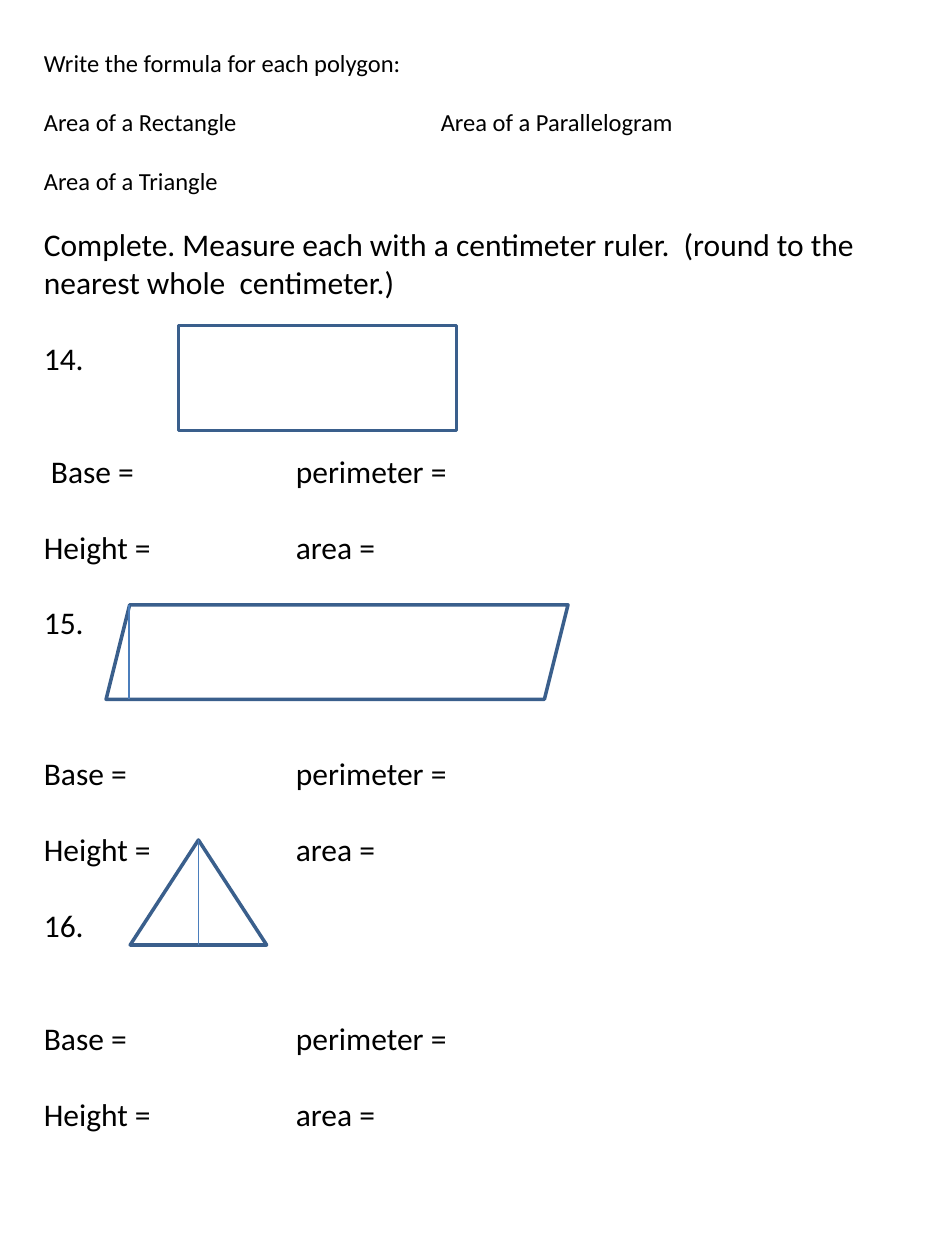
from lxml.etree import SubElement
from pptx import Presentation
from pptx.dml.color import RGBColor
from pptx.enum.shapes import MSO_CONNECTOR, MSO_SHAPE
from pptx.enum.text import MSO_AUTO_SIZE
from pptx.oxml.ns import qn
from pptx.util import Inches, Pt

HUES = {"ink": "000000", "paper": "FFFFFF", "edge": "3A5F8C", "height": "4B7EBC"}
COLS, ROWS = 90, 120
FONT = "Calibri"
SMALL, LARGE = 14, 18
LINE = {SMALL: 16.9, LARGE: 21.6}
TASKS = [("14.", " Base =", 2), ("15.", "Base =", 3), ("16.", "Base =", 2)]


def hue(name):
    """Return a named colour."""
    return RGBColor.from_string(HUES[name])


def grid(deck, *cells):
    """Turn alternating column and row counts into slide lengths."""
    units = (deck.slide_width / COLS, deck.slide_height / ROWS)
    return [round(cell * units[i % 2]) for i, cell in enumerate(cells)]


def add_line(frame, text, size, gap=0, stop=None):
    """Add a paragraph with a gap above and an optional tab stop in inches."""
    fresh = not frame.paragraphs[0].runs
    para = frame.paragraphs[0] if fresh else frame.add_paragraph()
    para.space_before = Pt(gap)
    if stop:
        tabs = SubElement(para._p.get_or_add_pPr(), qn("a:tabLst"))
        SubElement(tabs, qn("a:tab"), pos=str(Inches(stop)), algn="l")
    run = para.add_run()
    run.text = text
    run.font.name = FONT
    run.font.size = Pt(size)
    run.font.color.rgb = hue("ink")


def add_head(frame):
    """Write the formula prompts and the measuring instruction."""
    gap = LINE[SMALL]
    add_line(frame, "Write the formula for each polygon:", SMALL)
    add_line(frame, "Area of a Rectangle\tArea of a Parallelogram", SMALL, gap, 3.15)
    add_line(frame, "Area of a Triangle", SMALL, gap)
    add_line(frame, "Complete. Measure each with a centimeter ruler.  "
             "(round to the nearest whole  centimeter.)", LARGE, gap)


def add_task(frame, label, base, blank):
    """Write one numbered task with its answer prompts."""
    gap = LINE[LARGE]
    add_line(frame, label, LARGE, gap)
    add_line(frame, base + "\tperimeter =", LARGE, blank * gap, 2)
    add_line(frame, "Height =\tarea =", LARGE, gap, 2)


def add_text(slide, box):
    """Write the whole worksheet text in the given box."""
    frame = slide.shapes.add_textbox(*box).text_frame
    frame.word_wrap = True
    frame.auto_size = MSO_AUTO_SIZE.SHAPE_TO_FIT_TEXT
    add_head(frame)
    for task in TASKS:
        add_task(frame, *task)


def add_form(slide, kind, box, share=None):
    """Draw a polygon, with a height line at a share of its width."""
    left, top, width, height = box
    form = slide.shapes.add_shape(kind, *box)
    form.shadow.inherit = False
    form.fill.solid()
    form.fill.fore_color.rgb = hue("paper")
    form.line.color.rgb = hue("edge")
    form.line.width = Pt(2)
    if share is not None:
        mid = left + round(width * share)
        line = slide.shapes.add_connector(
            MSO_CONNECTOR.STRAIGHT, mid, top, mid, top + height)
        line.line.color.rgb = hue("height")
        line.line.width = Pt(0.75)
        SubElement(line._element.spPr, qn("a:effectLst"))


def main():
    """Build and save the worksheet."""
    deck = Presentation()
    deck.slide_width, deck.slide_height = Inches(7.5), Inches(10)
    slide = deck.slides.add_slide(deck.slide_layouts[6])
    add_text(slide, grid(deck, 3, 4, 85, 112.7))
    add_form(slide, MSO_SHAPE.RECTANGLE, grid(deck, 17, 31, 26.5, 10))
    add_form(slide, MSO_SHAPE.PARALLELOGRAM, grid(deck, 10.1, 57.6, 44, 9), 0.05)
    add_form(slide, MSO_SHAPE.ISOSCELES_TRIANGLE, grid(deck, 12.4, 80, 13, 10), 0.5)
    deck.save("out.pptx")


if __name__ == "__main__":
    main()
